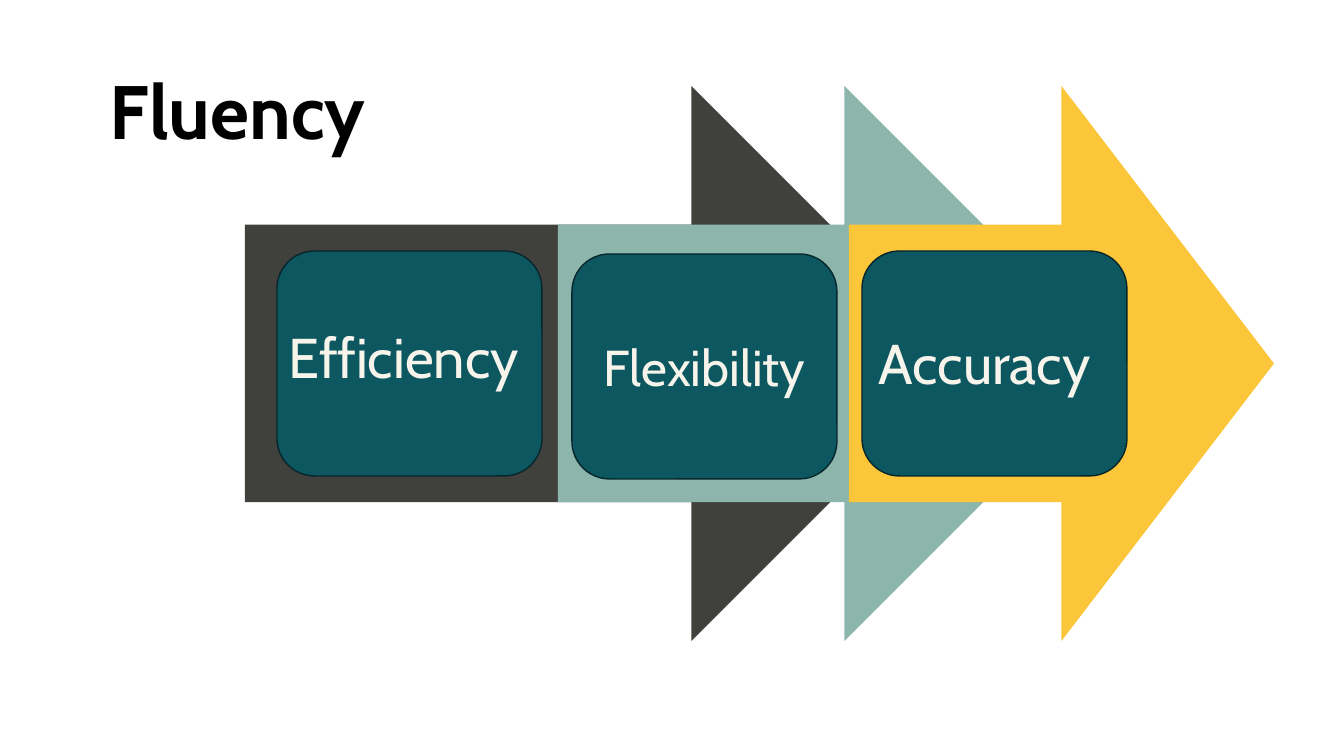
from pptx import Presentation
from pptx.dml.color import RGBColor
from pptx.enum.shapes import MSO_SHAPE as Shape
from pptx.enum.text import MSO_ANCHOR as Anchor, MSO_AUTO_SIZE as AutoSize, PP_ALIGN as Align
from pptx.util import Pt

EMU_PER_PX = 914400 / 100.8
FONT = "Cabin"
CREAM = "F7F5EB"
TEAL = "0D5761"
DARK_TEAL = "06262B"
ARROW_TOP, ARROW_HEIGHT = 86, 555
CARD_WIDTH, CARD_HEIGHT = 265, 225
LABEL_WIDTH, LABEL_HEIGHT = 252, 78


def px(length):
    return round(length * EMU_PER_PX)


def paint(color_format, hex_color):
    color_format.rgb = RGBColor.from_string(hex_color)


def add_filled(slide, preset, box, color):
    figure = slide.shapes.add_shape(preset, *map(px, box))
    figure.shadow.inherit = False
    figure.fill.solid()
    paint(figure.fill.fore_color, color)
    return figure


def add_arrow(slide, left, width, color):
    arrow = add_filled(slide, Shape.RIGHT_ARROW, (left, ARROW_TOP, width, ARROW_HEIGHT), color)
    arrow.line.fill.background()


def add_card(slide, left, top):
    card = add_filled(slide, Shape.ROUNDED_RECTANGLE, (left, top, CARD_WIDTH, CARD_HEIGHT), TEAL)
    paint(card.line.color, DARK_TEAL)
    card.line.width = Pt(1)
    return card


def write(frame, words, size, color, align=Align.LEFT, bold=False):
    frame.word_wrap = True
    line = frame.paragraphs[0]
    line.text = words
    line.alignment = align
    line.font.name = FONT
    line.font.size = Pt(size)
    line.font.bold = bold
    paint(line.font.color, color)
    return line


def add_title(slide, words):
    frame = slide.shapes.add_textbox(*map(px, (100, 42, 312, 146))).text_frame
    frame.vertical_anchor = Anchor.MIDDLE
    write(frame, words, 54, "000000", bold=True).line_spacing = 0.9


def add_label(slide, words, left, top):
    frame = slide.shapes.add_textbox(*map(px, (left, top, LABEL_WIDTH, LABEL_HEIGHT))).text_frame
    write(frame, words, 40, CREAM)
    frame.auto_size = AutoSize.SHAPE_TO_FIT_TEXT


def main():
    deck = Presentation()
    deck.slide_width, deck.slide_height = px(1344), px(756)
    slide = deck.slides.add_slide(deck.slide_layouts[6])

    add_title(slide, "Fluency")
    for left, width, color in ((245, 724, "40403D"), (558, 564, "8CB5AB"), (849, 425, "FBC639")):
        add_arrow(slide, left, width, color)

    add_card(slide, 862, 251)
    flexibility = add_card(slide, 572, 254)
    flexibility.text_frame.vertical_anchor = Anchor.MIDDLE
    write(flexibility.text_frame, "Flexibility", 36, CREAM, Align.CENTER)
    add_card(slide, 277, 251)

    add_label(slide, "Efficiency", 279, 318)
    add_label(slide, "Accuracy", 869, 324)
    deck.save("out.pptx")


if __name__ == "__main__":
    main()
